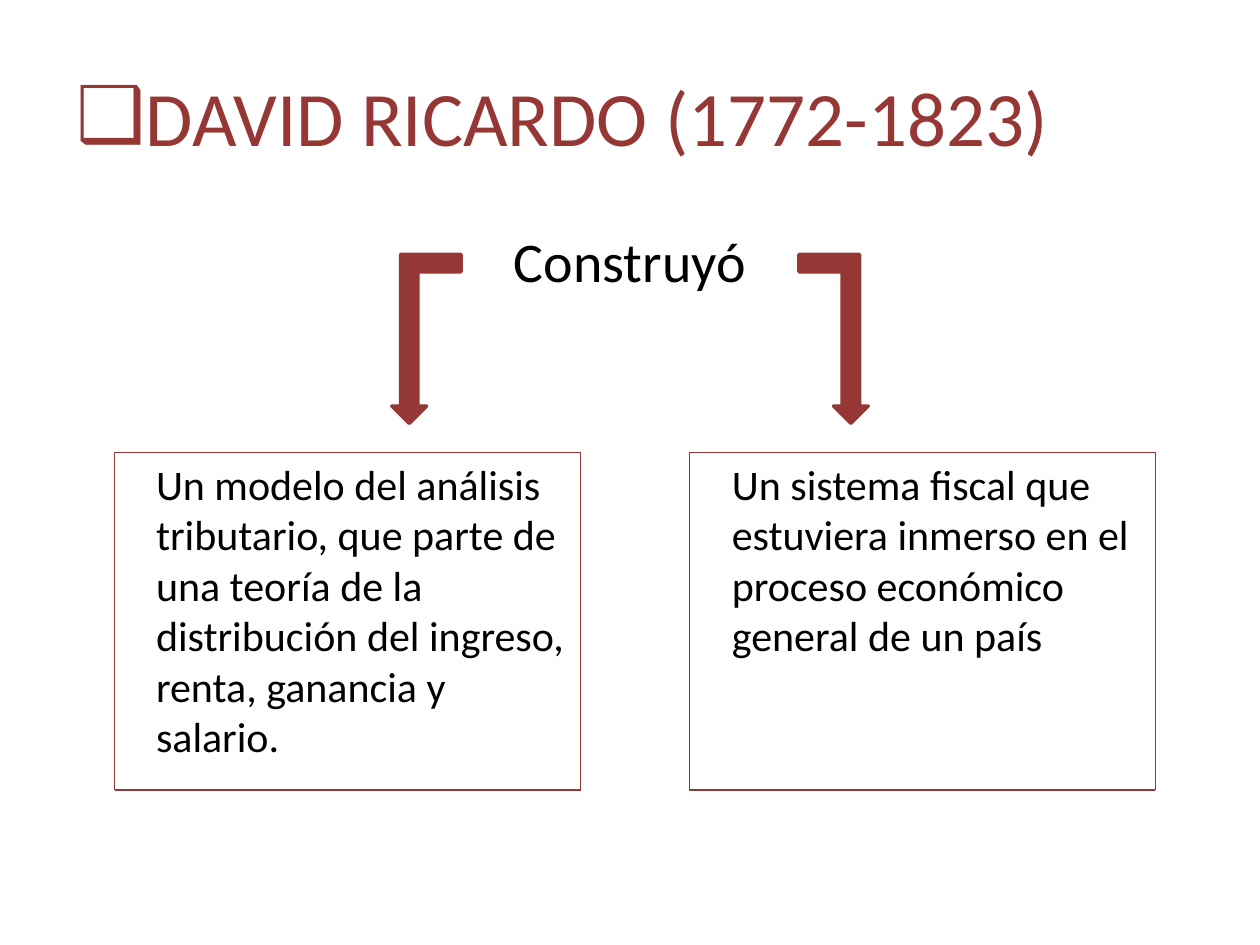
from lxml import etree
from pptx import Presentation, util as u
from pptx.dml.color import RGBColor
from pptx.enum import shapes, text
from pptx.oxml.ns import qn

MAROON = RGBColor(0x95, 0x37, 0x35)
BLACK = RGBColor(0, 0, 0)
FONT = "Calibri"
BOX_TOP, BOX_WIDTH, BOX_HEIGHT = 3.59, 3.7, 2.68

# Box left edge, text inset from it, text width, text height, wording
IDEAS = [
    (0.91, 0.23, 3.46, 2.93,
     "Un modelo del análisis tributario, que parte de una teoría de la "
     "distribución del ingreso, renta, ganancia y salario."),
    (5.47, 0.24, 3.62, 2.02,
     "Un sistema fiscal que estuviera inmerso en el proceso económico "
     "general de un país"),
]


def place(item, left, top, width, height):
    box = {"left": left, "top": top, "width": width, "height": height}
    for side, inches in box.items():
        setattr(item, side, u.Inches(inches))


def write(frame, wording, size, color, align):
    """Fill a text frame with one formatted paragraph and return it."""
    frame.word_wrap = True
    paragraph = frame.paragraphs[0]
    paragraph.alignment = align
    run = paragraph.add_run()
    run.text = wording
    for attribute, value in {"name": FONT, "size": u.Pt(size)}.items():
        setattr(run.font, attribute, value)
    run.font.color.rgb = color
    return paragraph


def set_bullet(paragraph, symbol=None, margin=0, indent=0):
    properties = paragraph._p.get_or_add_pPr()
    properties.set("marL", str(u.Inches(margin)))
    properties.set("indent", str(u.Inches(indent)))
    if symbol:
        etree.SubElement(properties, qn("a:buFont"), typeface="Arial")
        etree.SubElement(properties, qn("a:buChar"), char=symbol)
    else:
        etree.SubElement(properties, qn("a:buNone"))


def add_heading(title, left, top, width, height):
    place(title, left, top, width, height)
    frame = title.text_frame
    frame.vertical_anchor = text.MSO_ANCHOR.MIDDLE
    frame.auto_size = text.MSO_AUTO_SIZE.NONE
    heading = write(frame, "DAVID RICARDO (1772-1823)", 44, MAROON,
                    text.PP_ALIGN.LEFT)
    set_bullet(heading, "❑")


def add_verb(body, left, top, width, height):
    place(body, left, top, width, height)
    body.text_frame.auto_size = text.MSO_AUTO_SIZE.NONE
    verb = write(body.text_frame, "Construyó", 32, BLACK,
                 text.PP_ALIGN.CENTER)
    set_bullet(verb, margin=0.38, indent=-0.38)


def add_arrow(slide, left, top, width, height, mirrored):
    arrow = slide.shapes.add_shape(
        shapes.MSO_SHAPE.BENT_UP_ARROW,
        *map(u.Inches, (left, top, width, height)))
    arrow.rotation = 180
    arrow.shadow.inherit = False
    arrow.fill.solid()
    arrow.fill.fore_color.rgb = MAROON
    arrow.line.color.rgb = MAROON
    arrow.line.width = u.Pt(2)
    if mirrored:
        arrow._element.spPr.find(qn("a:xfrm")).set("flipH", "1")


def add_edge(slide, start, end):
    edge = slide.shapes.add_connector(
        shapes.MSO_CONNECTOR.STRAIGHT, *map(u.Inches, start + end))
    edge.line.color.rgb = MAROON
    edge.line.width = u.Pt(0.75)
    etree.SubElement(edge._element.spPr, qn("a:effectLst"))


def add_frame(slide, left, top, width, height):
    right, bottom = left + width, top + height
    for start, end in [((left, top), (left, bottom)),
                       ((left, top), (right, top)),
                       ((right, top), (right, bottom)),
                       ((left, bottom), (right, bottom))]:
        add_edge(slide, start, end)


def add_idea(slide, left, top, width, height, wording):
    idea = slide.shapes.add_textbox(
        *map(u.Inches, (left, top, width, height)))
    write(idea.text_frame, wording, 24, BLACK, text.PP_ALIGN.LEFT)
    idea.text_frame.auto_size = text.MSO_AUTO_SIZE.SHAPE_TO_FIT_TEXT


def main():
    deck = Presentation()
    deck.slide_width, deck.slide_height = u.Inches(10), u.Inches(7.5)
    slide = deck.slides.add_slide(deck.slide_layouts[1])

    add_heading(slide.shapes.title, 0.51, 0.29, 9, 1.25)
    add_verb(slide.placeholders[1], 0.5, 1.75, 9, 0.82)
    for left, mirrored in [(3.11, False), (6.34, True)]:
        add_arrow(slide, left, 2.02, 0.55, 1.34, mirrored)
    for left, inset, width, height, wording in IDEAS:
        add_idea(slide, left + inset, BOX_TOP, width, height, wording)
    for left, *_ in IDEAS:
        add_frame(slide, left, BOX_TOP, BOX_WIDTH, BOX_HEIGHT)

    deck.save("out.pptx")


if __name__ == "__main__":
    main()
